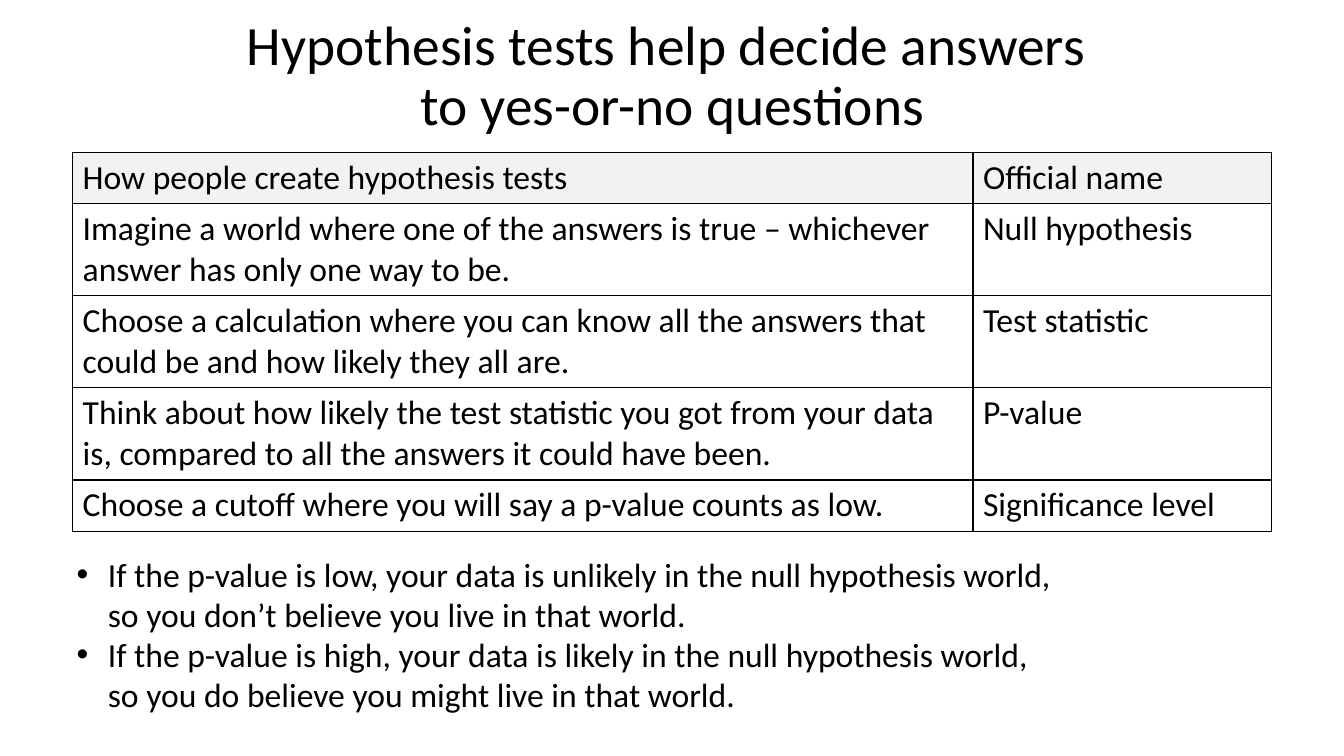
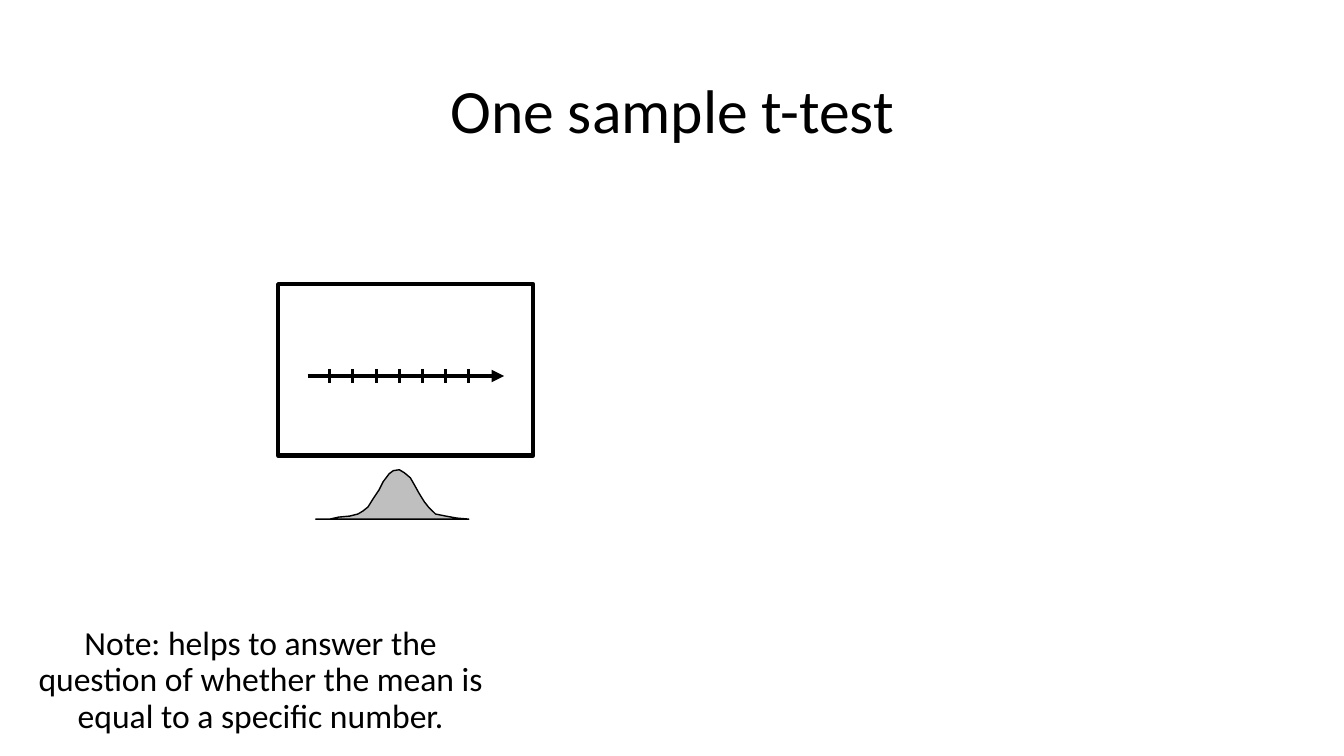
"""Build two slides on hypothesis tests and the one sample t-test."""
from pptx import Presentation
from pptx.dml.color import RGBColor
from pptx.enum.shapes import MSO_CONNECTOR, MSO_SHAPE
from pptx.enum.text import MSO_ANCHOR, MSO_AUTO_SIZE, PP_ALIGN
from pptx.oxml.ns import qn
from pptx.util import Inches, Pt
from lxml.etree import SubElement

FONT = "Calibri"
COLORS = {"ink": "000000", "paper": "FFFFFF", "header": "F2F2F2", "bell": "BFBFBF"}

TESTS_TITLE = "Hypothesis tests help decide answers \vto yes-or-no questions"
STEPS = [
    ("How people create hypothesis tests", "Official name"),
    ("Imagine a world where one of the answers is true – whichever answer has only one way to be.",
     "Null hypothesis"),
    ("Choose a calculation where you can know all the answers that could be and how likely they all are.",
     "Test statistic"),
    ("Think about how likely the test statistic you got from your data is, "
     "compared to all the answers it could have been.", "P-value"),
    ("Choose a cutoff where you will say a p-value counts as low.", "Significance level"),
]
COL_WIDTHS = (8.93, 2.96)
ROW_HEIGHTS = (0.51, 0.91, 0.91, 0.91, 0.51)
CONCLUSIONS = [
    "If the p-value is low, your data is unlikely in the null hypothesis world, "
    "\vso you don’t believe you live in that world.",
    "If the p-value is high, your data is likely in the null hypothesis world, "
    "\vso you do believe you might live in that world.",
]

T_TEST_TITLE = "One sample t-test"
NOTE = "Note: helps to answer the question of whether the mean is equal to a specific number."
AXIS_Y, TICK_START, TICK_STEP, TICK_HALF, TICKS = 3.73, 3.27, 0.23, 0.07, 7
BELL = [
    (3.13, 5.15), (3.27, 5.15), (3.36, 5.13), (3.47, 5.12), (3.55, 5.1), (3.6, 5.07),
    (3.65, 5.03), (3.7, 4.95), (3.76, 4.86), (3.8, 4.78), (3.86, 4.7), (3.9, 4.67),
    (3.96, 4.66), (4.01, 4.69), (4.07, 4.74), (4.11, 4.81), (4.16, 4.9), (4.21, 4.98),
    (4.25, 5.03), (4.32, 5.1), (4.42, 5.12), (4.53, 5.14), (4.65, 5.15),
]


def color(name):
    return RGBColor.from_string(COLORS[name])


def style(p, size, align=None, spacing=None):
    p.alignment = align
    p.line_spacing = spacing
    p.space_before = Pt(0)
    for r in p.runs:
        r.font.name, r.font.size = FONT, Pt(size)
        r.font.color.rgb = color("ink")


def place(sp, left, top, width, height):
    sp.left, sp.top = Inches(left), Inches(top)
    sp.width, sp.height = Inches(width), Inches(height)


def centred(sp, text, size):
    tf = sp.text_frame
    tf.word_wrap, tf.auto_size = True, MSO_AUTO_SIZE.NONE
    tf.vertical_anchor = MSO_ANCHOR.MIDDLE
    tf.text = text
    style(tf.paragraphs[0], size, PP_ALIGN.CENTER, 0.9)


def add_slide(prs, layout, title, top, height, size):
    s = prs.slides.add_slide(prs.slide_layouts[layout])
    place(s.shapes.title, 0.92, top, 11.5, height)
    centred(s.shapes.title, title, size)
    return s


def outline(sp, fill, width):
    sp.shadow.inherit = False
    sp.fill.solid()
    sp.fill.fore_color.rgb = color(fill)
    sp.line.color.rgb = color("ink")
    sp.line.width = Pt(width)


def add_line(shapes, x1, y1, x2, y2, width, arrow=False):
    line = shapes.add_connector(MSO_CONNECTOR.STRAIGHT, *map(Inches, (x1, y1, x2, y2)))
    line.line.color.rgb = color("ink")
    line.line.width = Pt(width)
    spPr = line._element.spPr
    if arrow:
        SubElement(spPr.find(qn("a:ln")), qn("a:tailEnd"), type="triangle")
    SubElement(spPr, qn("a:effectLst"))


def border(cell):
    tcPr = cell._tc.get_or_add_tcPr()
    for i, side in enumerate(("lnL", "lnR", "lnT", "lnB")):
        ln = tcPr.makeelement(qn("a:" + side), {"w": str(Pt(1))})
        fill = SubElement(ln, qn("a:solidFill"))
        SubElement(fill, qn("a:srgbClr"), val=COLORS["ink"])
        tcPr.insert(i, ln)


def add_steps(s):
    frame = s.shapes.add_table(len(STEPS), len(COL_WIDTHS), Inches(0.72), Inches(1.51),
                               Inches(sum(COL_WIDTHS)), Inches(sum(ROW_HEIGHTS)))
    table = frame.table
    table.first_row = table.horz_banding = False
    for col, width in zip(table.columns, COL_WIDTHS):
        col.width = Inches(width)
    for i, (row, height, texts) in enumerate(zip(table.rows, ROW_HEIGHTS, STEPS)):
        row.height = Inches(height)
        for cell, text in zip(row.cells, texts):
            cell.text = text
            style(cell.text_frame.paragraphs[0], 24)
            cell.fill.solid()
            cell.fill.fore_color.rgb = color("paper" if i else "header")
            border(cell)


def add_conclusions(s):
    body = s.placeholders[1]
    place(body, 0.16, 5.44, 12.61, 1.72)
    tf = body.text_frame
    tf.auto_size = MSO_AUTO_SIZE.NONE
    for i, text in enumerate(CONCLUSIONS):
        p = tf.add_paragraph() if i else tf.paragraphs[0]
        p.text = text
        pPr = p._p.get_or_add_pPr()
        pPr.set("marL", str(Inches(0.81)))
        pPr.set("indent", str(Inches(-0.31)))
        SubElement(pPr, qn("a:buFont"), typeface="Arial")
        SubElement(pPr, qn("a:buChar"), char="•")
        style(p, 24)


def add_number_line(s):
    shapes = s.shapes.add_group_shape().shapes
    box = shapes.add_shape(MSO_SHAPE.RECTANGLE, *map(Inches, (2.76, 2.82, 2.53, 1.7)))
    outline(box, "paper", 3)
    add_line(shapes, 3.05, AXIS_Y, 5, AXIS_Y, 3, arrow=True)
    for i in range(TICKS):
        x = TICK_START + i * TICK_STEP
        add_line(shapes, x, AXIS_Y - TICK_HALF, x, AXIS_Y + TICK_HALF, 2.25)


def add_bell(s):
    start, *rest = [(Inches(x), Inches(y)) for x, y in BELL]
    builder = s.shapes.build_freeform(*start)
    builder.add_line_segments(rest, close=True)
    outline(builder.convert_to_shape(), "bell", 1)


def main():
    prs = Presentation()
    prs.slide_width, prs.slide_height = Inches(13.33), Inches(7.5)

    s = add_slide(prs, 1, TESTS_TITLE, 0.24, 1.05, 39.6)
    add_steps(s)
    add_conclusions(s)

    s = add_slide(prs, 5, T_TEST_TITLE, 0.4, 1.45, 44)
    add_number_line(s)
    add_bell(s)
    note = s.shapes.add_textbox(*map(Inches, (0.18, 6.03, 4.81, 1.45)))
    centred(note, NOTE, 24)

    prs.save("out.pptx")


if __name__ == "__main__":
    main()
